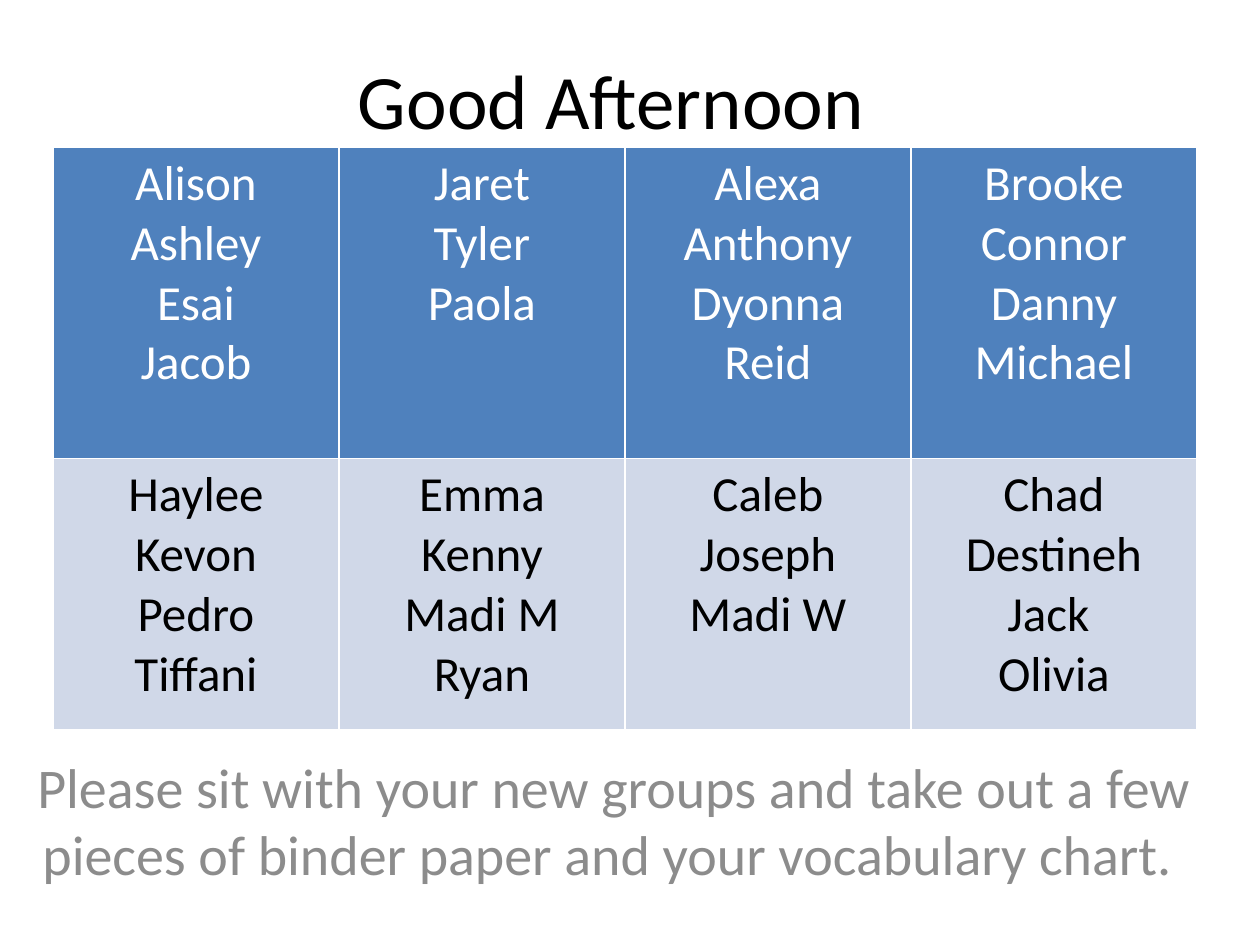
from dataclasses import dataclass

from pptx import Presentation
from pptx.dml.color import RGBColor
from pptx.enum.text import MSO_ANCHOR, PP_ALIGN
from pptx.util import Inches, Pt


@dataclass(frozen=True)
class Theme:
    """Colours, font and type sizes of the slide."""
    font: str = "Calibri"
    ink: RGBColor = RGBColor.from_string("000000")
    paper: RGBColor = RGBColor.from_string("FFFFFF")
    muted: RGBColor = RGBColor.from_string("8C8C8C")
    first_row: RGBColor = RGBColor.from_string("4F81BD")
    second_row: RGBColor = RGBColor.from_string("D0D8E8")
    title_size: Pt = Pt(44)
    instruction_size: Pt = Pt(32)
    name_size: Pt = Pt(28)


THEME = Theme()

SEATING = [
    [
        ["Alison", "Ashley", "Esai", "Jacob"],
        ["Jaret", "Tyler", "Paola"],
        ["Alexa", "Anthony", "Dyonna", "Reid"],
        ["Brooke", "Connor", "Danny", "Michael"],
    ],
    [
        ["Haylee", "Kevon", "Pedro", "Tiffani"],
        ["Emma", "Kenny", "Madi M", "Ryan"],
        ["Caleb", "Joseph", "Madi W"],
        ["Chad", "Destineh", "Jack ", "Olivia"],
    ],
]
ROW_HEIGHTS = [Inches(2.47), Inches(2.15)]
ROW_COLOURS = [(THEME.first_row, THEME.paper), (THEME.second_row, THEME.ink)]


def style_paragraphs(text_frame, size, colour):
    """Centre every paragraph and give it the theme font."""
    for paragraph in text_frame.paragraphs:
        paragraph.alignment = PP_ALIGN.CENTER
        font = paragraph.font
        font.name, font.size, font.bold = THEME.font, size, False
        font.color.rgb = colour


def fill_placeholder(placeholder, box, text, size, colour, anchor):
    """Move a template placeholder into its box and write its text."""
    placeholder.left, placeholder.top, placeholder.width, placeholder.height = box
    frame = placeholder.text_frame
    frame.text = text
    frame.word_wrap = True
    frame.vertical_anchor = anchor
    style_paragraphs(frame, size, colour)


def add_seating(slide, box):
    """Place the table of groups, one group in each cell."""
    table = slide.shapes.add_table(len(SEATING), len(SEATING[0]), *box).table
    for row, height in zip(table.rows, ROW_HEIGHTS):
        row.height = height
    for r, (groups, (fill, ink)) in enumerate(zip(SEATING, ROW_COLOURS)):
        for c, names in enumerate(groups):
            cell = table.cell(r, c)
            cell.fill.solid()
            cell.fill.fore_color.rgb = fill
            cell.text_frame.text = "\n".join(names)
            style_paragraphs(cell.text_frame, THEME.name_size, ink)


def main():
    """Build the greeting slide and save it."""
    deck = Presentation()
    deck.slide_width, deck.slide_height = Inches(10), Inches(7.5)
    slide = deck.slides.add_slide(deck.slide_layouts[0])
    title_box = Inches(0.67), Inches(-0.02), Inches(8.5), Inches(1.61)
    instruction_box = Inches(0), Inches(5.92), Inches(9.75), Inches(1.92)
    seating_box = Inches(0.42), Inches(1.17), Inches(9.08), sum(ROW_HEIGHTS)

    fill_placeholder(slide.shapes.title, title_box, "Good Afternoon ",
                     THEME.title_size, THEME.ink, MSO_ANCHOR.MIDDLE)
    fill_placeholder(slide.placeholders[1], instruction_box,
                     "Please sit with your new groups and take out a few "
                     "pieces of binder paper and your vocabulary chart. ",
                     THEME.instruction_size, THEME.muted, MSO_ANCHOR.TOP)
    add_seating(slide, seating_box)
    deck.save("out.pptx")


if __name__ == "__main__":
    main()
